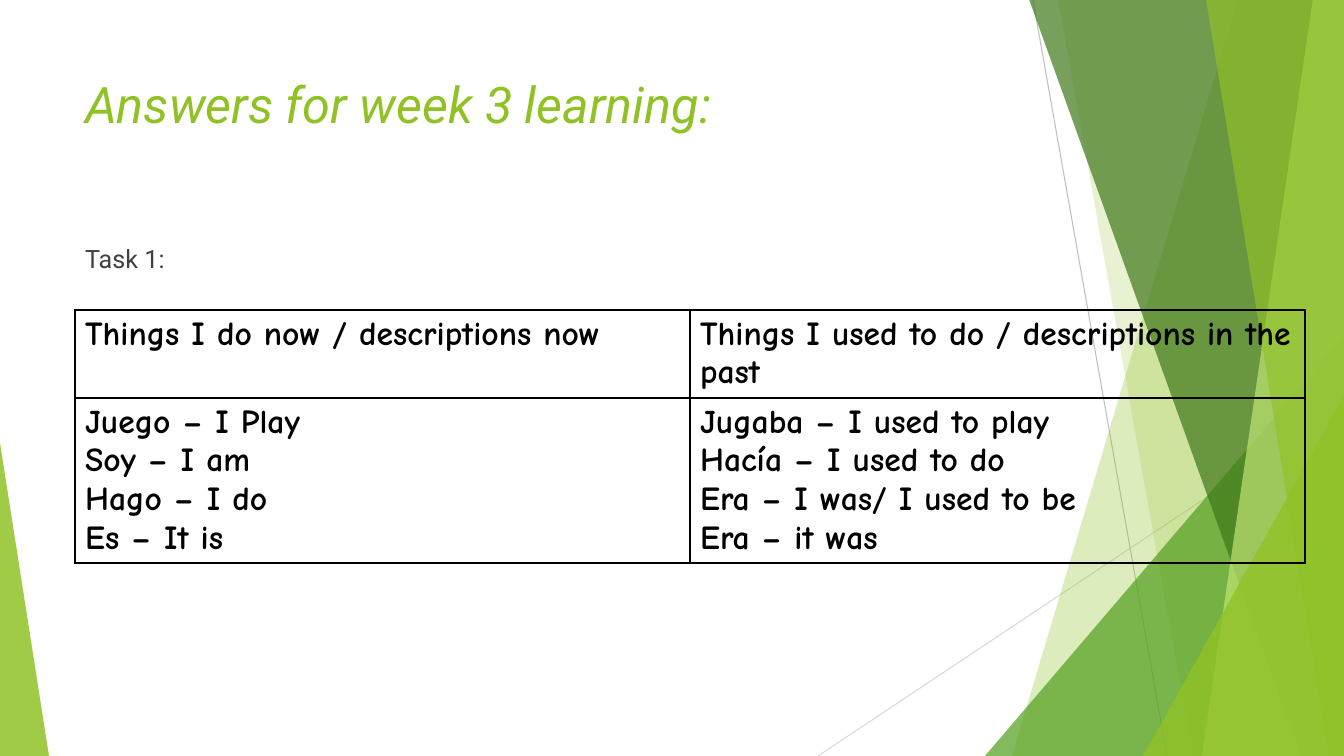
"""Build the slide with the answers for week 3 learning."""
import lxml.etree
import pptx
import pptx.dml.color
import pptx.enum.shapes
import pptx.enum.text
import pptx.oxml.ns
import pptx.util

PX = 914400 / 100.8
WIDTH, HEIGHT = 1344, 756
GREEN = "90C226"
BLACK = "000000"
FACETS = [
    ("band", (1238, 1012), GREEN, 30),
    ("band", (1058, 1193), GREEN, 20),
    ("triangle", (985, 336, 359, 420, 1), "54A021", 72),
    ("band", (1029, 1301), "3F7819", 70),
    ("band", (1313, 1202), "C0E474", 70),
    ("band", (1206, 1329), GREEN, 65),
    ("triangle", (1143, 396, 201, 360, 1), GREEN, 80),
    ("triangle", (0, 443, 49, 313, 0), GREEN, 85),
]
ANSWERS = [
    ["Things I do now / descriptions now",
     "Things I used to do / descriptions in the past"],
    ["Juego – I Play\nSoy – I am\nHago – I do\nEs – It is",
     "Jugaba – I used to play\nHacía – I used to do\n"
     "Era – I was/ I used to be\nEra – it was"],
]


def emu(*lengths):
    return [round(length * PX) for length in lengths]


def rgb(value):
    return pptx.dml.color.RGBColor.from_string(value)


def sub(parent, tag, **attrs):
    return lxml.etree.SubElement(parent, pptx.oxml.ns.qn(tag), attrs)


def write(tf, text, size, font, color, bold=False, italic=False, before=0):
    tf.word_wrap = True
    for i, line in enumerate(text.split("\n")):
        p = tf.add_paragraph() if i else tf.paragraphs[0]
        p.alignment = pptx.enum.text.PP_ALIGN.LEFT
        p.space_before = pptx.util.Pt(before)
        r = p.add_run()
        r.text = line
        r.font.size = pptx.util.Pt(size)
        r.font.name = font
        r.font.bold = bold
        r.font.italic = italic
        r.font.color.rgb = rgb(color)


class Deck:
    font = "Roboto"
    table_font = "Comic Neue"

    def __init__(self):
        self.prs = pptx.Presentation()
        self.prs.slide_width, self.prs.slide_height = emu(WIDTH, HEIGHT)
        self.s = self.prs.slides.add_slide(self.prs.slide_layouts[1])

    def line(self, x1, y1, x2, y2, color):
        sp = self.s.shapes.add_connector(
            pptx.enum.shapes.MSO_CONNECTOR.STRAIGHT, *emu(x1, y1, x2, y2))
        sp.line.color.rgb = rgb(color)
        sp.line.width = pptx.util.Pt(0.75)
        sub(sp.element.spPr, "a:effectLst")

    def paint(self, sp, color, opacity):
        sp.shadow.inherit = False
        sp.line.fill.background()
        sp.fill.solid()
        sp.fill.fore_color.rgb = rgb(color)
        clr = sp.element.spPr.find(".//" + pptx.oxml.ns.qn("a:srgbClr"))
        sub(clr, "a:alpha", val=str(opacity * 1000))

    def band(self, top, bottom, color, opacity):
        builder = self.s.shapes.build_freeform(top, -1, scale=PX)
        builder.add_line_segments([(WIDTH, -1), (WIDTH, HEIGHT), (bottom, HEIGHT)])
        self.paint(builder.convert_to_shape(), color, opacity)

    def triangle(self, x, y, w, h, apex, color, opacity):
        sp = self.s.shapes.add_shape(
            pptx.enum.shapes.MSO_SHAPE.ISOSCELES_TRIANGLE, *emu(x, y, w, h))
        sp.adjustments[0] = apex
        self.paint(sp, color, opacity)

    def placeholder(self, index, x, y, w, h, text, **style):
        sp = self.s.placeholders[index]
        sp.left, sp.top, sp.width, sp.height = emu(x, y, w, h)
        sp.element.getparent().append(sp.element)
        tf = sp.text_frame
        tf.auto_size = pptx.enum.text.MSO_AUTO_SIZE.NONE
        tf.vertical_anchor = pptx.enum.text.MSO_ANCHOR.TOP
        write(tf, text, font=self.font, **style)
        return tf

    def plain_list(self, tf):
        for p in tf.paragraphs:
            pPr = p._p.get_or_add_pPr()
            pPr.set("marL", "0")
            pPr.set("indent", "0")
            sub(pPr, "a:buNone")

    def border(self, cell):
        tcPr = cell._tc.get_or_add_tcPr()
        for i, side in enumerate(("a:lnL", "a:lnR", "a:lnT", "a:lnB")):
            ln = sub(tcPr, side, w=str(pptx.util.Pt(1)))
            sub(sub(ln, "a:solidFill"), "a:srgbClr", val=BLACK)
            tcPr.insert(i, ln)

    def table(self, x, y, widths, heights, rows):
        table = self.s.shapes.add_table(
            len(rows), len(widths), *emu(x, y, sum(widths), sum(heights))).table
        table.first_row = table.horz_banding = False
        for column, width in zip(table.columns, emu(*widths)):
            column.width = width
        for row, height, texts in zip(table.rows, emu(*heights), rows):
            row.height = height
            for cell, text in zip(row.cells, texts):
                cell.fill.background()
                self.border(cell)
                write(cell.text_frame, text, 24, self.table_font, BLACK, bold=True)


def main():
    deck = Deck()
    deck.line(1033, 0, 1167, HEIGHT, "BFBFBF")
    deck.line(WIDTH, 406, 818, HEIGHT, "D9D9D9")
    for kind, geometry, color, opacity in FACETS:
        draw = deck.band if kind == "band" else deck.triangle
        draw(*geometry, color, opacity)
    deck.placeholder(0, 75, 68, 948, 145, "Answers for week 3 learning:",
                     size=36, color=GREEN, italic=True)
    body = deck.placeholder(1, 75, 238, 948, 427, "Task 1:",
                            size=18, color="404040", before=10)
    deck.plain_list(body)
    deck.table(75, 310, [615, 615], [88, 165], ANSWERS)
    deck.prs.save("out.pptx")


if __name__ == "__main__":
    main()
